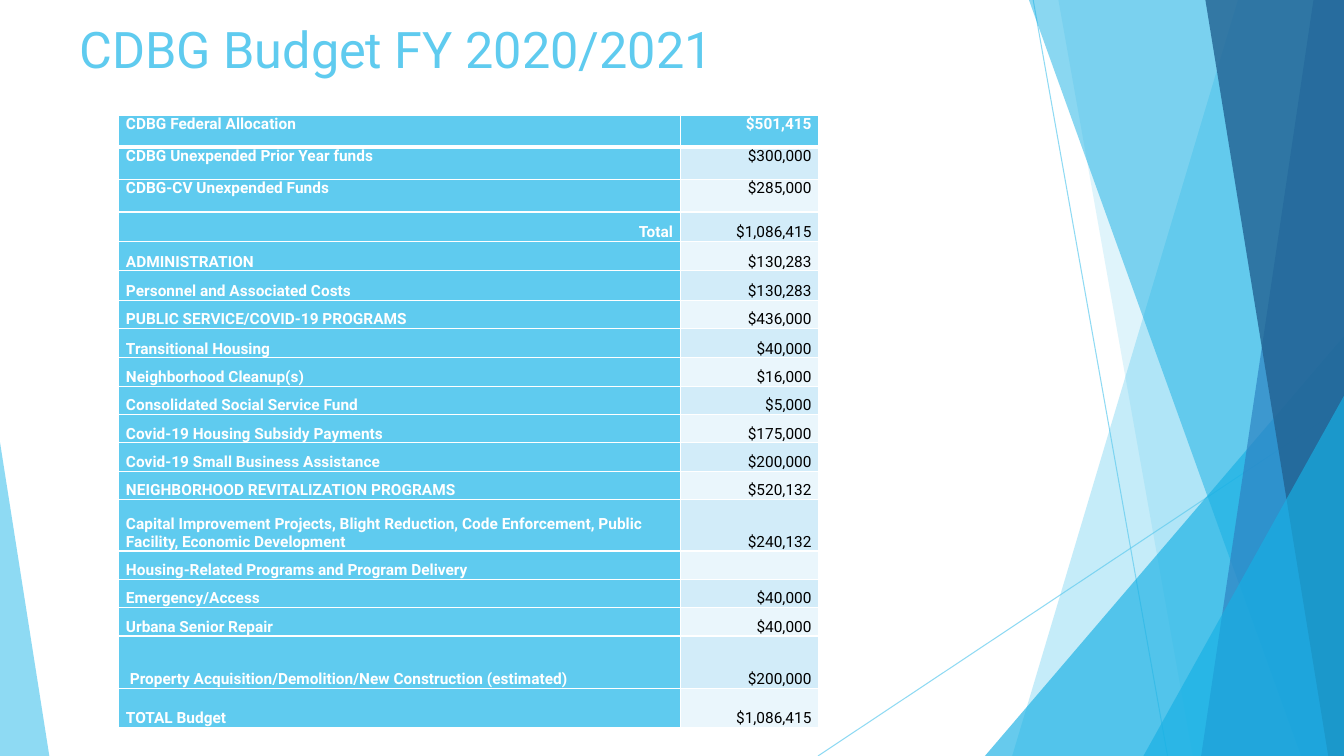
"""Build the CDBG budget slide: a title, a budget table and faceted side panels."""
from dataclasses import dataclass

from lxml.etree import SubElement
from pptx import Presentation
from pptx.dml.color import RGBColor
from pptx.enum.shapes import MSO_CONNECTOR, MSO_SHAPE
from pptx.enum.text import MSO_ANCHOR, MSO_AUTO_SIZE, PP_ALIGN
from pptx.oxml.ns import qn
from pptx.util import Pt

PX = 9525
WIDTH, HEIGHT = 1280, 720
FONT = "Roboto"
COLORS = {
    "sky": "5FCBEF",
    "cyan": "17B0E4",
    "blue": "2E83C3",
    "navy": "226292",
    "band_dark": "D2ECF9",
    "band_light": "EAF6FC",
    "white": "FFFFFF",
    "black": "000000",
}


@dataclass
class Ray:
    x1: int
    y1: int
    x2: int
    y2: int


@dataclass
class Panel:
    top_x: int
    bottom_x: int
    color: str
    alpha: int


@dataclass
class Triangle:
    x: int
    y: int
    width: int
    apex: float
    color: str
    alpha: int


@dataclass
class Row:
    label: str
    amount: str
    height: int = 27
    anchor: MSO_ANCHOR = MSO_ANCHOR.BOTTOM
    align: PP_ALIGN = PP_ALIGN.LEFT


RAYS = [Ray(984, 0, 1112, 720), Ray(1280, 387, 779, 720)]
FACETS = [
    Panel(1179, 964, "sky", 36),
    Panel(1008, 1136, "sky", 20),
    Triangle(938, 320, 342, 1, "cyan", 66),
    Panel(980, 1239, "cyan", 50),
    Panel(1251, 1144, "blue", 70),
    Panel(1148, 1265, "navy", 80),
    Triangle(1089, 377, 191, 1, "cyan", 66),
    Triangle(0, 421, 47, 0, "sky", 70),
]
ROWS = [
    Row("CDBG Federal Allocation", "$501,415", 30, MSO_ANCHOR.TOP),
    Row("CDBG Unexpended Prior Year funds", "$300,000", 31, MSO_ANCHOR.TOP),
    Row("CDBG-CV Unexpended Funds", "$285,000", 31, MSO_ANCHOR.TOP),
    Row("Total", "$1,086,415", 28, align=PP_ALIGN.RIGHT),
    Row("ADMINISTRATION", "$130,283", 28),
    Row("Personnel and Associated Costs", "$130,283", 28),
    Row("PUBLIC SERVICE/COVID-19 PROGRAMS", "$436,000"),
    Row("Transitional Housing", "$40,000", 28),
    Row("Neighborhood Cleanup(s)", "$16,000"),
    Row("Consolidated Social Service Fund", "$5,000"),
    Row("Covid-19 Housing Subsidy Payments", "$175,000"),
    Row("Covid-19 Small Business Assistance", "$200,000"),
    Row("NEIGHBORHOOD REVITALIZATION PROGRAMS", "$520,132"),
    Row("Capital Improvement Projects, Blight Reduction, Code Enforcement, "
        "Public Facility, Economic Development", "$240,132", 49),
    Row("Housing-Related Programs and Program Delivery", ""),
    Row("Emergency/Access", "$40,000"),
    Row("Urbana Senior Repair", "$40,000"),
    Row(" Property Acquisition/Demolition/New Construction (estimated)", "$200,000", 50),
    Row("TOTAL Budget", "$1,086,415", 37),
]
COLUMN_WIDTHS = [535, 132]


def rgb(name: str) -> RGBColor:
    """Look up a named colour."""
    return RGBColor.from_string(COLORS[name])


def write(tf, text: str, *, size: int, color: str, bold: bool = False,
          align: PP_ALIGN = PP_ALIGN.LEFT) -> None:
    """Put one formatted run into a text frame."""
    p = tf.paragraphs[0]
    p.alignment = align
    r = p.add_run()
    r.text = text
    r.font.name, r.font.size, r.font.bold = FONT, Pt(size), bold
    r.font.color.rgb = rgb(color)


def set_alpha(s, percent: int) -> None:
    """Make the colour of a shape or connector partly transparent."""
    for clr in s.element.spPr.iter(qn("a:srgbClr")):
        SubElement(clr, qn("a:alpha"), val=str(percent * 1000))


def draw_ray(sp, ray: Ray) -> None:
    """Draw a thin translucent line."""
    ends = [v * PX for v in (ray.x1, ray.y1, ray.x2, ray.y2)]
    s = sp.add_connector(MSO_CONNECTOR.STRAIGHT, *ends)
    s.line.color.rgb = rgb("sky")
    s.line.width = Pt(0.75)
    set_alpha(s, 70)
    SubElement(s.element.spPr, qn("a:effectLst"))


def draw_facet(sp, facet: Panel | Triangle) -> None:
    """Draw a translucent panel or triangle that ends at the slide's foot."""
    if isinstance(facet, Panel):
        builder = sp.build_freeform(facet.top_x, 0, scale=PX)
        builder.add_line_segments([(WIDTH, 0), (WIDTH, HEIGHT), (facet.bottom_x, HEIGHT)])
        s = builder.convert_to_shape()
    else:
        box = [v * PX for v in (facet.x, facet.y, facet.width, HEIGHT - facet.y)]
        s = sp.add_shape(MSO_SHAPE.ISOSCELES_TRIANGLE, *box)
        s.adjustments[0] = facet.apex
    s.shadow.inherit = False
    s.fill.solid()
    s.fill.fore_color.rgb = rgb(facet.color)
    s.line.fill.background()
    set_alpha(s, facet.alpha)


def set_borders(cell, top: int, bottom: int) -> None:
    """Give a cell white borders, with top and bottom widths in points."""
    props = cell._tc.get_or_add_tcPr()
    for side, width in (("L", 1), ("R", 1), ("T", top), ("B", bottom)):
        ln = SubElement(props, qn(f"a:ln{side}"), w=str(Pt(width)))
        SubElement(SubElement(ln, qn("a:solidFill")), qn("a:srgbClr"), val=COLORS["white"])


def draw_table(sp, x: int, y: int, rows: list[Row]) -> None:
    """Draw the budget table with a header row and banded amounts."""
    size = sum(COLUMN_WIDTHS) * PX, sum(row.height for row in rows) * PX
    table = sp.add_table(len(rows), len(COLUMN_WIDTHS), x * PX, y * PX, *size).table
    for column, width in zip(table.columns, COLUMN_WIDTHS):
        column.width = width * PX
    for i, row in enumerate(rows):
        table.rows[i].height = row.height * PX
        band = "band_dark" if i % 2 else "band_light"
        for j, text in enumerate((row.label, row.amount)):
            strong = i == 0 or j == 0
            cell = table.cell(i, j)
            set_borders(cell, top=3 if i == 1 else 1, bottom=3 if i == 0 else 1)
            cell.fill.solid()
            cell.fill.fore_color.rgb = rgb("sky" if strong else band)
            cell.margin_left = cell.margin_right = 7 * PX
            cell.margin_top = cell.margin_bottom = 0
            cell.vertical_anchor = row.anchor
            write(cell.text_frame, text, size=11, bold=strong,
                  color="white" if strong else "black",
                  align=PP_ALIGN.RIGHT if j else row.align)


def main() -> None:
    """Assemble and save the slide."""
    prs = Presentation()
    prs.slide_width, prs.slide_height = WIDTH * PX, HEIGHT * PX
    slide = prs.slides.add_slide(prs.slide_layouts[5])
    sp = slide.shapes
    for ray in RAYS:
        draw_ray(sp, ray)
    for facet in FACETS:
        draw_facet(sp, facet)
    title = sp.title
    title.left, title.top, title.width, title.height = (v * PX for v in (66, 12, 902, 138))
    tf = title.text_frame
    tf.word_wrap, tf.auto_size = True, MSO_AUTO_SIZE.NONE
    tf.vertical_anchor = MSO_ANCHOR.TOP
    write(tf, "CDBG Budget FY 2020/2021", size=36, color="sky")
    draw_table(sp, 113, 110, ROWS)
    prs.save("out.pptx")


if __name__ == "__main__":
    main()
